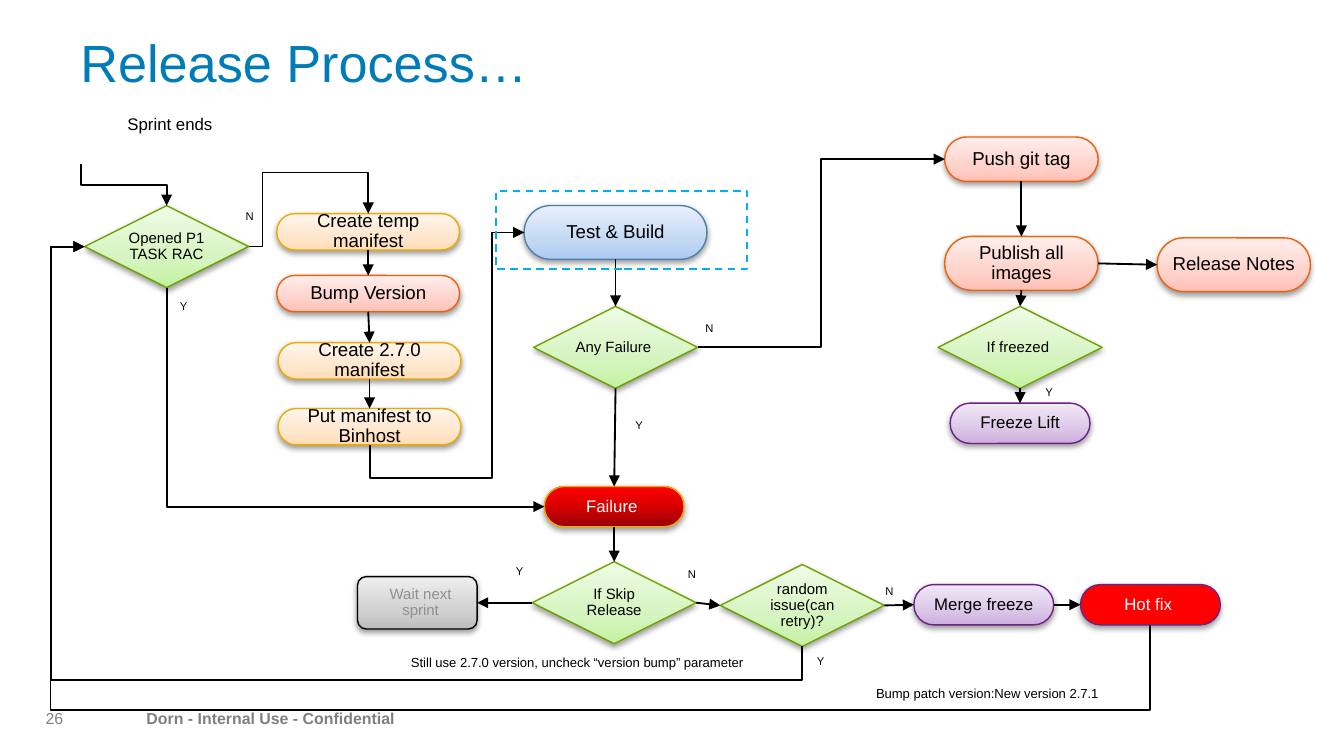
from dataclasses import dataclass
from typing import Optional

import pptx
import pptx.dml.color
import pptx.enum.dml
import pptx.enum.shapes
import pptx.enum.text
import pptx.oxml.ns
import pptx.util
from lxml import etree

Inches = pptx.util.Inches
Kind = pptx.enum.shapes.MSO_SHAPE
Align = pptx.enum.text.PP_ALIGN
Anchor = pptx.enum.text.MSO_ANCHOR
qn = pptx.oxml.ns.qn
TOP, LEFT, BOTTOM, RIGHT = range(4)


@dataclass(frozen=True)
class Look:
    stops: tuple  # (position in percent, colour); a single stop is a solid fill
    line: str
    text: str = "000000"


def pastel(dark: str, middle: str, light: str, line: str, text: str = "000000") -> Look:
    return Look(((0, dark), (35, middle), (100, light)), line, text)


class Theme:
    font = "Arial"
    black, title, footer, page, frame = "000000", "007DB8", "7F7F7F", "808080", "00B0F0"
    title_size, footer_size, note_size, tag_size, caption_size = 28, 8.5, 7, 6, 9
    blue = pastel("ABCAF2", "C5D9F4", "E8F0FC", "507FA9")
    green = pastel("C4F2A2", "D5F4BF", "EFFCE6", "6DA200")
    orange = pastel("FFDCB6", "FFE6CC", "FFF5EC", "EDAB00")
    salmon = pastel("FFC0B5", "FFD2CB", "FFEEEB", "EE600B")
    purple = pastel("CDADDE", "DBC6E7", "F1E9F6", "6D2284")
    grey = pastel("BDBDBD", "D1D1D1", "EEEEEE", "000000", "8F8F8F")
    alarm = Look(((0, "970000"), (50, "D70000"), (100, "FF0000")), "EDAB00", "FFFFFF")
    red = Look(((0, "FF0000"),), "6D2284", "FFFFFF")


@dataclass(frozen=True)
class Node:
    text: str
    left: float
    top: float
    width: float
    height: float
    look: Look
    size: float = 10
    kind: Kind = Kind.ROUNDED_RECTANGLE
    rounding: Optional[float] = 0.494
    insets: tuple = (0, 0, 0, 0)


@dataclass(frozen=True)
class Label:
    text: str
    left: float
    top: float
    width: float = 0.26
    height: float = 0.18
    size: float = Theme.tag_size
    colour: str = Theme.black
    bold: bool = False
    spacing: float = 1
    align: Align = Align.LEFT
    tight: bool = False  # no insets, centred vertically


@dataclass(frozen=True)
class Link:
    begin: object  # node name, or a free (x, y) point
    begin_side: int
    end: str
    end_side: int
    elbow: str = ""
    rotation: int = 0
    adjust: tuple = ()


def decision(text: str, left: float, top: float) -> Node:
    return Node(text, left, top, 1.22, 0.61, Theme.green, 8, Kind.DIAMOND, None)


def step(text: str, left: float, top: float, look: Look) -> Node:
    return Node(text, left, top, 1.36, 0.27, look)


def action(text: str, left: float, top: float, look: Look) -> Node:
    return Node(text, left, top, 1.04, 0.3, look, 9)


NODES = {
    "build": Node("Test & Build", 3.9, 1.53, 1.36, 0.4, Theme.blue),
    "opened": decision("Opened P1 TASK RAC", 0.63, 1.53),
    "failure": action("Failure ", 4.05, 3.62, Theme.alarm),
    "temp": step("Create temp manifest", 2.06, 1.59, Theme.orange),
    "bump": step("Bump Version", 2.06, 2.05, Theme.salmon),
    "create": step("Create 2.7.0 manifest", 2.07, 2.55, Theme.orange),
    "put": step("Put manifest to Binhost", 2.07, 3.04, Theme.orange),
    "push": Node("Push git tag", 7.03, 1.02, 1.14, 0.33, Theme.salmon),
    "publish": Node("Publish all images", 7.03, 1.76, 1.14, 0.4, Theme.salmon),
    "notes": Node("Release Notes", 8.61, 1.77, 1.14, 0.4, Theme.salmon),
    "any": decision("Any Failure ", 3.97, 2.28),
    "skip": decision("If Skip Release", 3.96, 4.18),
    "random": decision("random issue(can retry)?", 5.36, 4.2),
    "freezed": decision("If freezed ", 6.98, 2.28),
    "wait": Node("Wait next sprint", 2.66, 4.29, 0.89, 0.39, Theme.grey, 8,
                 rounding=None, insets=(0.2, 0.15, 0.15, 0.15)),
    "merge": action("Merge freeze", 6.8, 4.35, Theme.purple),
    "hotfix": action("Hot fix ", 8.04, 4.35, Theme.red),
    "lift": action("Freeze Lift", 7.07, 3, Theme.purple),
}

DOWNWARD = (("temp", "bump"), ("bump", "create"), ("create", "put"), ("build", "any"),
            ("any", "failure"), ("failure", "skip"), ("push", "publish"),
            ("publish", "freezed"), ("freezed", "lift"))
RIGHTWARD = (("publish", "notes"), ("skip", "random"), ("random", "merge"), ("merge", "hotfix"))
LINKS = [
    *(Link(begin, BOTTOM, end, TOP) for begin, end in DOWNWARD),
    *(Link(begin, RIGHT, end, LEFT) for begin, end in RIGHTWARD),
    Link("skip", LEFT, "wait", RIGHT),
    Link("put", BOTTOM, "build", LEFT, "bentConnector4", 90, (-0.158, 0.794)),
    Link("any", RIGHT, "push", LEFT, "bentConnector3"),
    Link("opened", BOTTOM, "failure", LEFT, "bentConnector2", 270),
    Link("opened", RIGHT, "temp", TOP, "bentConnector4", 0, (0.116, 2.25)),
    Link((0.6, 1.22), BOTTOM, "opened", TOP, "bentConnector3", 270),
    Link("hotfix", BOTTOM, "opened", LEFT, "bentConnector4", 90, (-0.226, 1.032)),
    Link("random", BOTTOM, "opened", LEFT, "bentConnector4", 90, (-0.084, 1.047)),
]

TAGS = (("N", 1.73, 1.51), ("Y", 4.63, 3.06), ("N", 5.15, 2.34), ("Y", 1.24, 2.18),
        ("Y", 3.74, 4.15), ("N", 5.02, 4.17), ("Y", 5.98, 4.82), ("N", 6.49, 4.3),
        ("Y", 7.68, 2.82))
LABELS = [
    Label("Dorn - Internal Use - Confidential", 1.09, 5.29, 1.9, 0.13,
          Theme.footer_size, Theme.footer, True, 0.9, tight=True),
    Label("26", 0.32, 5.29, 0.15, 0.13, Theme.footer_size, Theme.page,
          spacing=0.9, align=Align.RIGHT, tight=True),
    Label("Release Process…", 0.5, 0.23, 9, 0.94, Theme.title_size, Theme.title, spacing=0.9),
    Label("Sprint ends", 0.85, 0.8, 1.1, 0.25, Theme.caption_size),
    Label("Bump patch version:New version 2.7.1", 6.42, 5.05, 2.44, 0.22, Theme.note_size),
    Label("Still use 2.7.0 version, uncheck “version bump” parameter",
          2.96, 4.82, 3.2, 0.22, Theme.note_size),
    *(Label(*tag) for tag in TAGS),
]


def rgb(colour: str) -> pptx.dml.color.RGBColor:
    return pptx.dml.color.RGBColor.from_string(colour)


def add_xml(parent, tag: str, **attributes):
    return etree.SubElement(parent, qn(tag), {k: str(v) for k, v in attributes.items()})


def set_text(shape, text: str, size: float, colour: str, align: Align,
             spacing: float, insets: Optional[tuple] = None, bold: bool = False) -> None:
    frame = shape.text_frame
    frame.text = text
    frame.word_wrap = True
    if insets is not None:
        frame.margin_left, frame.margin_top, frame.margin_right, frame.margin_bottom = map(Inches, insets)
        frame.vertical_anchor = Anchor.MIDDLE
    paragraph = frame.paragraphs[0]
    paragraph.alignment, paragraph.line_spacing = align, spacing
    font = paragraph.runs[0].font
    font.name, font.size, font.bold = Theme.font, pptx.util.Pt(size), bold
    font.color.rgb = rgb(colour)


def draw_node(slide, node: Node):
    shape = slide.shapes.add_shape(
        node.kind, *map(Inches, (node.left, node.top, node.width, node.height)))
    if node.rounding is not None:
        shape.adjustments[0] = node.rounding
    if len(node.look.stops) == 1:
        shape.fill.solid()
        shape.fill.fore_color.rgb = rgb(node.look.stops[0][1])
    else:
        shape.fill.gradient()
        shape.fill.gradient_angle = 90
        stop_list = shape._element.spPr.find(".//" + qn("a:gsLst"))
        stop_list.clear()
        for position, colour in node.look.stops:
            add_xml(add_xml(stop_list, "a:gs", pos=position * 1000), "a:srgbClr", val=colour)
    shape.line.color.rgb = rgb(node.look.line)
    shape.line.width = pptx.util.Pt(0.75)
    # Soft shadow below the shape
    shape.shadow.inherit = False
    shadow = add_xml(shape._element.spPr.find(qn("a:effectLst")), "a:outerShdw",
                     blurRad=40000, dist=20000, dir=5400000, rotWithShape=0)
    add_xml(add_xml(shadow, "a:srgbClr", val=Theme.black), "a:alpha", val=38000)
    set_text(shape, node.text, node.size, node.look.text, Align.CENTER, 0.9, node.insets)
    return shape


def draw_label(slide, label: Label) -> None:
    box = slide.shapes.add_textbox(
        *map(Inches, (label.left, label.top, label.width, label.height)))
    set_text(box, label.text, label.size, label.colour, label.align, label.spacing,
             (0, 0, 0, 0) if label.tight else None, label.bold)


def bend(connector, link: Link) -> None:
    """Turn the connector about its centre so that it leaves in the wanted direction."""
    x, y = connector.begin_x, connector.begin_y
    dx, dy = connector.end_x - x, connector.end_y - y
    across, down = {0: (dx, dy), 90: (dy, -dx), 270: (-dy, dx)}[link.rotation]
    connector.width, connector.height = abs(across), abs(down)
    connector.left = x + (dx - abs(across)) // 2
    connector.top = y + (dy - abs(down)) // 2
    properties = connector._element.spPr
    transform = properties.find(qn("a:xfrm"))
    transform.set("rot", str(link.rotation * 60000))
    transform.set("flipH", str(int(across < 0)))
    transform.set("flipV", str(int(down < 0)))
    geometry = properties.find(qn("a:prstGeom"))
    geometry.set("prst", link.elbow)
    for number, value in enumerate(link.adjust, 1):
        add_xml(geometry.find(qn("a:avLst")), "a:gd", name=f"adj{number}",
                fmla=f"val {round(value * 100000)}")


def draw_link(slide, link: Link, shapes: dict) -> None:
    types = pptx.enum.shapes.MSO_CONNECTOR
    free = not isinstance(link.begin, str)
    x, y = map(Inches, link.begin if free else (0, 0))
    connector = slide.shapes.add_connector(
        types.ELBOW if link.elbow else types.STRAIGHT, x, y, x, y)
    if not free:
        connector.begin_connect(shapes[link.begin], link.begin_side)
    connector.end_connect(shapes[link.end], link.end_side)
    if link.elbow:
        bend(connector, link)
    connector.line.color.rgb = rgb(Theme.black)
    connector.line.width = pptx.util.Pt(1)
    add_xml(connector._element.spPr.find(qn("a:ln")), "a:tailEnd", type="triangle")
    add_xml(connector._element.spPr, "a:effectLst")


def main() -> None:
    presentation = pptx.Presentation()
    presentation.slide_width = Inches(10)
    presentation.slide_height = Inches(10) * 9 // 16
    slide = presentation.slides.add_slide(presentation.slide_layouts[6])

    # Flow chart
    shapes = {name: draw_node(slide, node) for name, node in NODES.items()}
    for link in LINKS:
        draw_link(slide, link, shapes)

    # Title, footer and captions
    for label in LABELS:
        draw_label(slide, label)

    # Dashed frame around the build step
    frame = slide.shapes.add_shape(Kind.RECTANGLE, *map(Inches, (3.69, 1.42, 1.87, 0.58)))
    frame.shadow.inherit = False
    frame.fill.background()
    frame.line.color.rgb = rgb(Theme.frame)
    frame.line.width = pptx.util.Pt(1)
    frame.line.dash_style = pptx.enum.dml.MSO_LINE.DASH

    presentation.save("out.pptx")


if __name__ == "__main__":
    main()
